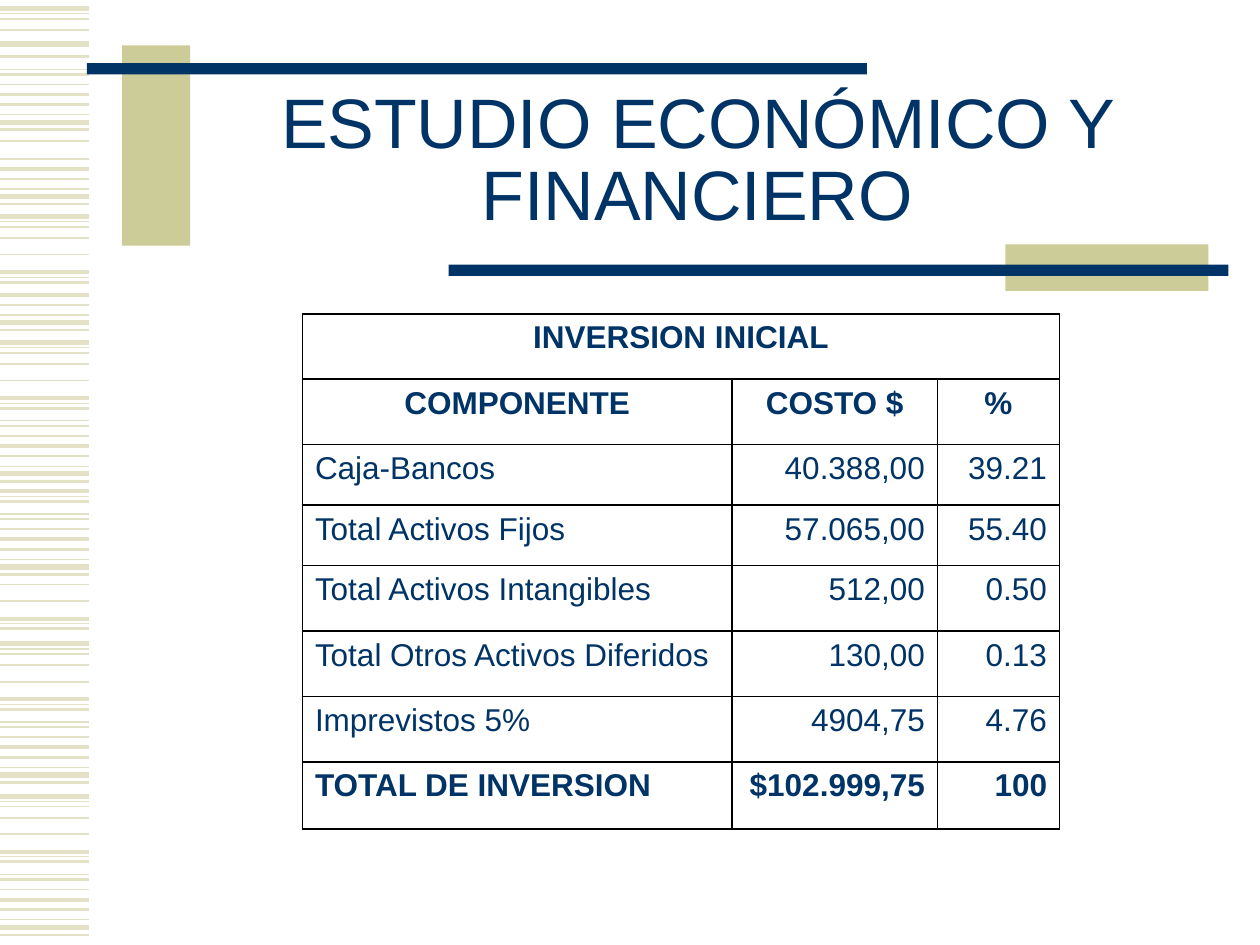
from pptx import Presentation
from pptx.dml.color import RGBColor
from pptx.enum.shapes import MSO_CONNECTOR, MSO_SHAPE
from pptx.enum.text import MSO_ANCHOR, MSO_AUTO_SIZE, PP_ALIGN
from pptx.oxml import parse_xml
from pptx.oxml.ns import nsdecls
from pptx.util import Inches, Pt

NAVY = RGBColor(0x00, 0x33, 0x66)
SAND = RGBColor(0xCC, 0xCC, 0x99)
PALE = RGBColor(0xE3, 0xE2, 0xC7)
BLACK = RGBColor(0, 0, 0)
LEFT, MID, RIGHT = PP_ALIGN.LEFT, PP_ALIGN.CENTER, PP_ALIGN.RIGHT
TOP, CENTER = MSO_ANCHOR.TOP, MSO_ANCHOR.MIDDLE
FIXED = MSO_AUTO_SIZE.NONE
RECT = MSO_SHAPE.RECTANGLE
LINE = MSO_CONNECTOR.STRAIGHT

UNIT = Inches(0.01)
WIDE, HIGH = 1000, 750
EDGE = 71

THEME = [
    (0, 3), (4, 0.75), (8, 1), (17, 1),
    (30, 1), (44, 2.25), (48, 0.75), (52, 1.5),
    (62, 0.75), (66, 1.5), (74, 1), (82, 2.25),
    (90, 1.5), (98, 0.75), (104, 3), (110, 1.5),
]
RUNS = [
    (7, 0, 4), (35, 0, 1), (-7, 7, 16), (82, 4, 5), (52, 10, 16),
    (172, 0, 8), (152, 11, 16), (272, 0, 16), (346, 5, 16),
    (447, 3, 8), (511, 0, 16), (632, 0, 16),
]
BARS = [
    (97, 36, 54, 159, SAND),
    (69, 50, 619, 9, NAVY),
    (798, 194, 161, 37, SAND),
    (356, 210, 619, 9, NAVY),
]
COLS = [341, 163, 97]
ROWS = [52, 52, 48, 48, 52, 52, 52, 53]
DATA = [
    ("INVERSION INICIAL", "", ""),
    ("COMPONENTE", "COSTO $", "%"),
    ("Caja-Bancos", "40.388,00", "39.21"),
    ("Total Activos Fijos", "57.065,00", "55.40"),
    ("Total Activos Intangibles", "512,00", "0.50"),
    ("Total Otros Activos Diferidos", "130,00", "0.13"),
    ("Imprevistos 5%", "4904,75", "4.76"),
    ("TOTAL DE INVERSION", "$102.999,75", "100"),
]


def grid(*nums):
    return [n * UNIT for n in nums]


def write(frame, text, size=18, bold=False, align=LEFT, space=None):
    para = frame.paragraphs[0]
    para.alignment = align
    para.line_spacing = space
    run = para.add_run()
    run.text = text
    font = run.font
    font.name, font.size, font.bold = "Arial", Pt(size), bold
    font.color.rgb = NAVY


def stripe(slide, y, width):
    line = slide.shapes.add_connector(LINE, *grid(0, y, EDGE, y))
    line.line.color.rgb = PALE
    line.line.width = Pt(width)
    line._element.spPr.append(parse_xml(f"<a:effectLst {nsdecls('a')}/>"))


def bar(slide, x, y, w, h, color):
    box = slide.shapes.add_shape(RECT, *grid(x, y, w, h))
    box.shadow.inherit = False
    box.fill.solid()
    box.fill.fore_color.rgb = color
    box.line.fill.background()


def head(slide, text):
    title = slide.shapes.title
    title.left, title.top, title.width, title.height = grid(150, 67, 807, 125)
    frame = title.text_frame
    frame.word_wrap = True
    frame.auto_size = FIXED
    frame.vertical_anchor = CENTER
    write(frame, text, size=40, align=MID, space=0.85)


def border(cell):
    props = cell._tc.get_or_add_tcPr()
    for side in "LRTB":
        props.append(parse_xml(
            f'<a:ln{side} {nsdecls("a")} w="{Pt(1)}"><a:solidFill>'
            f'<a:srgbClr val="{BLACK}"/></a:solidFill></a:ln{side}>'))


def table(slide):
    place = grid(240, 249, sum(COLS), sum(ROWS))
    grate = slide.shapes.add_table(len(ROWS), len(COLS), *place).table
    grate.first_row = grate.horz_banding = False
    for col, width in zip(grate.columns, COLS):
        col.width = width * UNIT
    for row, height in zip(grate.rows, ROWS):
        row.height = height * UNIT
    grate.cell(0, 0).merge(grate.cell(0, len(COLS) - 1))
    for r, texts in enumerate(DATA):
        for c, text in enumerate(texts):
            cell = grate.cell(r, c)
            border(cell)
            cell.fill.background()
            cell.vertical_anchor = TOP
            if text:
                align = MID if r < 2 else RIGHT if c else LEFT
                bold = r < 2 or r == len(DATA) - 1
                write(cell.text_frame, text, bold=bold, align=align)


def main():
    deck = Presentation()
    deck.slide_width, deck.slide_height = grid(WIDE, HIGH)
    slide = deck.slides.add_slide(deck.slide_layouts[5])
    for start, first, last in RUNS:
        for step, width in THEME[first:last]:
            stripe(slide, start + step, width)
    for item in BARS:
        bar(slide, *item)
    head(slide, "ESTUDIO ECONÓMICO Y FINANCIERO")
    table(slide)
    deck.save("out.pptx")


if __name__ == "__main__":
    main()
